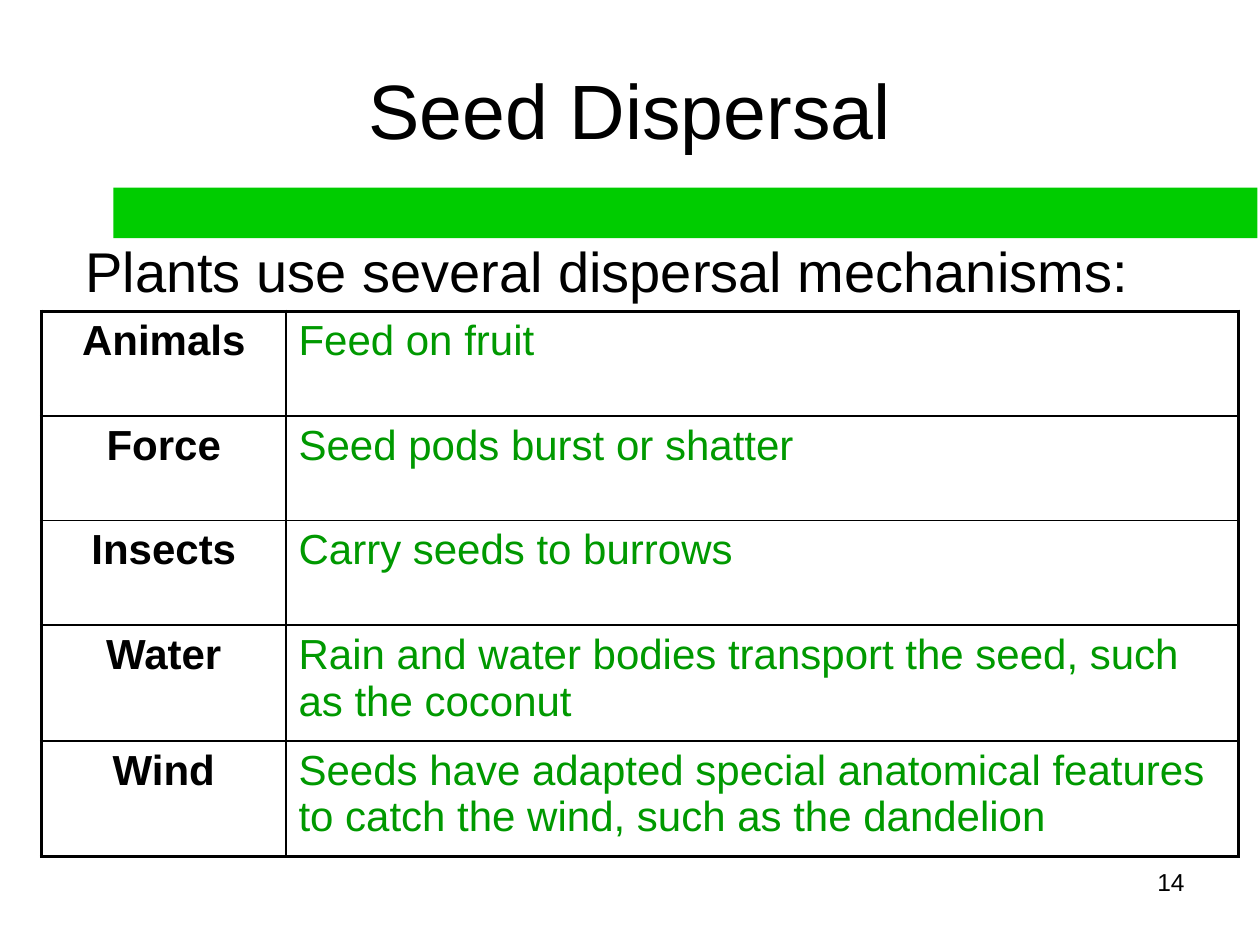
import lxml.etree
import pptx
import pptx.dml.color
import pptx.enum.shapes
import pptx.enum.text
import pptx.oxml.ns
import pptx.util

PX = 9144  # EMU per px, 100 px to the inch
BLACK = pptx.dml.color.RGBColor(0x00, 0x00, 0x00)
BAR_GREEN = pptx.dml.color.RGBColor(0x00, 0xCC, 0x00)
TEXT_GREEN = pptx.dml.color.RGBColor(0x00, 0x99, 0x00)
ALIGN = pptx.enum.text.PP_ALIGN
ANCHOR = pptx.enum.text.MSO_ANCHOR
THIN, THICK = 1, 2.25

MECHANISMS = [
    ("Animals", "Feed on fruit"),
    ("Force", "Seed pods burst or shatter"),
    ("Insects", "Carry seeds to burrows"),
    ("Water", "Rain and water bodies transport the seed, such as the coconut"),
    ("Wind", "Seeds have adapted special anatomical features to catch the wind, "
             "such as the dandelion"),
]
COLUMN_WIDTHS = [194, 756]
ROW_HEIGHTS = [83, 83, 83, 92, 92]


def emu(box):
    return [pptx.util.Emu(length * PX) for length in box]


def write(frame, text, size, color=BLACK, align=ALIGN.LEFT, bold=False):
    frame.word_wrap = True
    paragraph = frame.paragraphs[0]
    paragraph.text = text
    paragraph.alignment = align
    paragraph.font.name = "Arial"
    paragraph.font.size = pptx.util.Pt(size)
    paragraph.font.bold = bold
    paragraph.font.color.rgb = color


def add_text(slide, box, text, size, align=ALIGN.LEFT, anchor=ANCHOR.TOP):
    frame = slide.shapes.add_textbox(*emu(box)).text_frame
    frame.vertical_anchor = anchor
    write(frame, text, size, align=align)


def add_bar(slide, box):
    bar = slide.shapes.add_shape(pptx.enum.shapes.MSO_SHAPE.RECTANGLE, *emu(box))
    bar.shadow.inherit = False
    bar.fill.solid()
    bar.fill.fore_color.rgb = BAR_GREEN
    bar.line.fill.background()


def set_borders(cell, widths):
    """Draw black borders; widths are points for left, right, top, bottom."""
    properties = cell._tc.get_or_add_tcPr()
    qn = pptx.oxml.ns.qn
    for index, (side, width) in enumerate(zip("LRTB", widths)):
        line = lxml.etree.Element(qn(f"a:ln{side}"), w=str(pptx.util.Pt(width)))
        fill = lxml.etree.SubElement(line, qn("a:solidFill"))
        lxml.etree.SubElement(fill, qn("a:srgbClr"), val=str(BLACK))
        properties.insert(index, line)


def add_mechanism_table(slide, left, top):
    box = (left, top, sum(COLUMN_WIDTHS), sum(ROW_HEIGHTS))
    last_row = len(MECHANISMS) - 1
    table = slide.shapes.add_table(len(MECHANISMS), 2, *emu(box)).table
    table.first_row = table.horz_banding = False
    for column, width in zip(table.columns, emu(COLUMN_WIDTHS)):
        column.width = width
    for row, height in zip(table.rows, emu(ROW_HEIGHTS)):
        row.height = height
    for r, (mechanism, description) in enumerate(MECHANISMS):
        name_cell, description_cell = table.cell(r, 0), table.cell(r, 1)
        write(name_cell.text_frame, mechanism, 24, align=ALIGN.CENTER, bold=True)
        write(description_cell.text_frame, description, 24, TEXT_GREEN)
        top_width = THICK if r == 0 else THIN
        bottom_width = THICK if r == last_row else THIN
        for cell, sides in ((name_cell, (THICK, THIN)),
                            (description_cell, (THIN, THICK))):
            cell.fill.background()
            set_borders(cell, (*sides, top_width, bottom_width))


def main():
    deck = pptx.Presentation()
    deck.slide_width, deck.slide_height = emu((1000, 750))
    slide = deck.slides.add_slide(deck.slide_layouts[6])
    add_bar(slide, (90, 149, 908, 40))
    add_text(slide, (717, 683, 233, 52), "14", 14, ALIGN.RIGHT)
    add_text(slide, (50, 30, 900, 112), "Seed Dispersal", 44, ALIGN.CENTER,
             ANCHOR.MIDDLE)
    add_mechanism_table(slide, 33, 247)
    add_text(slide, (58, 183, 900, 63),
             "Plants use several dispersal mechanisms:", 32)
    deck.save("out.pptx")


if __name__ == "__main__":
    main()
